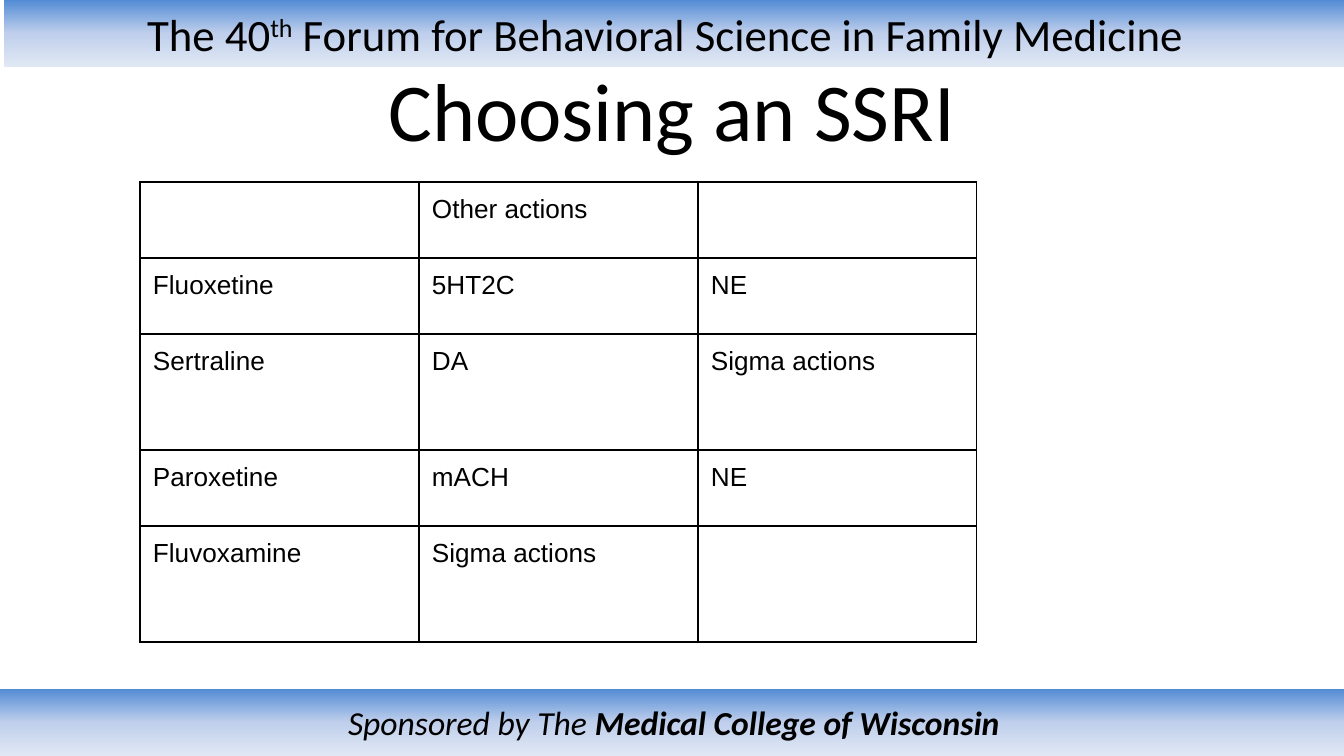
from lxml import etree
from pptx import Presentation
from pptx.dml.color import RGBColor
from pptx.enum import shapes, text
from pptx.oxml import ns
from pptx.util import Pt

PX = 914400 / 134.4
WIDE, HIGH = 1344, 756
COLORS = {"ink": "000000", "deep": "538CD5", "mid": "BFCFEC", "pale": "E0E8F4"}
FADE = [(0, "deep"), (50, "mid"), (100, "pale")]
ROWS = [
    ["", "Other actions", ""],
    ["Fluoxetine", "5HT2C", "NE"],
    ["Sertraline", "DA", "Sigma actions"],
    ["Paroxetine", "mACH", "NE"],
    ["Fluvoxamine", "Sigma actions", ""],
]
COL, LOW, TALL = 279, 76, 116
HEIGHTS = [LOW, LOW, TALL, LOW, TALL]


def px(n):
    return round(n * PX)


def style(font, size, name="Calibri"):
    font.size = Pt(size)
    font.name = name
    font.color.rgb = RGBColor.from_string(COLORS["ink"])


def add(parent, tag, **attrs):
    return etree.SubElement(parent, ns.qn(tag), attrs)


def paint(parent, color):
    add(parent, "a:srgbClr", val=COLORS[color])


def fade(shape):
    """Give the shape a vertical gradient with the stops of FADE."""
    fill = etree.Element(ns.qn("a:gradFill"), rotWithShape="1")
    stops = add(fill, "a:gsLst")
    for spot, color in FADE:
        paint(add(stops, "a:gs", pos=str(spot * 1000)), color)
    add(fill, "a:lin", ang="5400000", scaled="0")
    shape.fill.background()
    old = shape._element.spPr.find(ns.qn("a:noFill"))
    old.getparent().replace(old, fill)


def write(shape, parts, size):
    """Write centred runs and return them."""
    frame = shape.text_frame
    frame.word_wrap = True
    frame.vertical_anchor = text.MSO_ANCHOR.MIDDLE
    para = frame.paragraphs[0]
    para.alignment = text.PP_ALIGN.CENTER
    runs = []
    for part in parts:
        run = para.add_run()
        run.text = part
        style(run.font, size)
        runs.append(run)
    return runs


def band(slide, left, top, width, parts, size):
    bar = slide.shapes.add_shape(
        shapes.MSO_SHAPE.RECTANGLE, px(left), px(top), px(width), px(67))
    bar.shadow.inherit = False
    bar.line.fill.background()
    fade(bar)
    return bar, write(bar, parts, size)


def title(slide, words):
    box = slide.shapes.add_textbox(px(46), px(66), px(1252), px(85))
    write(box, [words], 44)


def border(cell):
    props = cell._tc.get_or_add_tcPr()
    for at, side in enumerate("LRTB"):
        line = etree.Element(ns.qn(f"a:ln{side}"), w=str(Pt(0.75)))
        paint(add(line, "a:solidFill"), "ink")
        props.insert(at, line)


def table(slide, left, top):
    grid = slide.shapes.add_table(
        len(ROWS), len(ROWS[0]), px(left), px(top),
        px(COL * len(ROWS[0])), px(sum(HEIGHTS))).table
    grid.first_row = grid.horz_banding = False
    for col in grid.columns:
        col.width = px(COL)
    for row, high, words in zip(grid.rows, HEIGHTS, ROWS):
        row.height = px(high)
        for cell, word in zip(row.cells, words):
            cell.margin_left = cell.margin_right = px(13)
            cell.margin_top = cell.margin_bottom = px(13)
            cell.fill.background()
            cell.text = word
            style(cell.text_frame.paragraphs[0].font, 14, "Arial")
            border(cell)


def main():
    deck = Presentation()
    deck.slide_width, deck.slide_height = px(WIDE), px(HIGH)
    slide = deck.slides.add_slide(deck.slide_layouts[6])

    # Header band, its text set a little left of the middle
    bar, runs = band(
        slide, 4, 0, WIDE,
        ["The 40", "th", " Forum for Behavioral Science in Family Medicine"], 24)
    bar.text_frame.margin_right = px(35)
    runs[1].font._element.set("baseline", "30000")

    # Footer band
    _, runs = band(
        slide, 0, 689, WIDE + 4,
        ["Sponsored by The ", "Medical College of Wisconsin"], 18)
    for run in runs:
        run.font.italic = True
    runs[1].font.bold = True

    # Title and table
    title(slide, "Choosing an SSRI")
    table(slide, 140, 182)

    deck.save("out.pptx")


if __name__ == "__main__":
    main()
